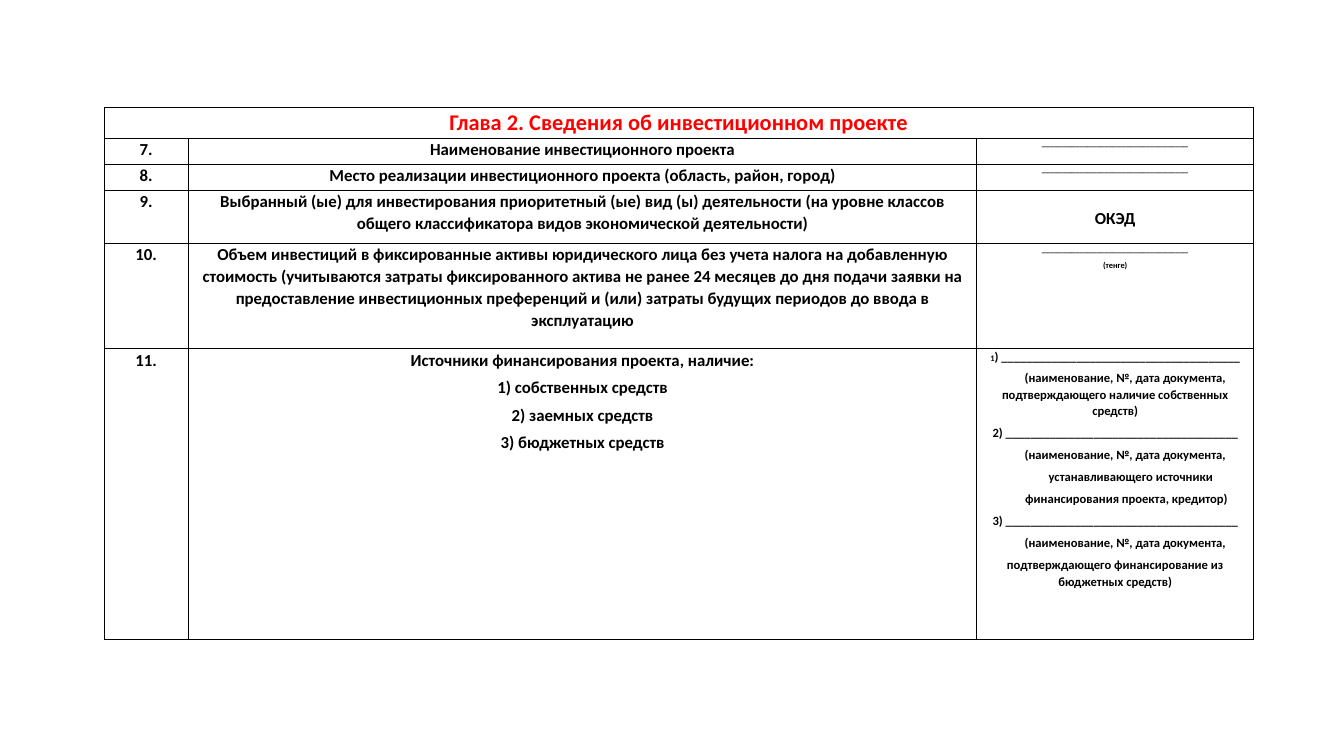
from dataclasses import dataclass

from lxml.etree import SubElement
from pptx import Presentation
from pptx.dml.color import RGBColor
from pptx.enum.text import PP_ALIGN
from pptx.oxml.ns import qn
from pptx.table import _Cell
from pptx.util import Inches, Pt

FONT = "Calibri"
BLACK = "000000"
RED = "FF0000"
BLANK_LINE = "_" * 35
DOCUMENT_HINT = "(наименование, №, дата документа,"


@dataclass
class Line:
    text: str
    size: float = 24
    indent: float = 0
    after: float = 8
    spacing: float = 1.07
    color: str = BLACK
    lead: str = ""  # small opening run
    lead_size: float = 12


@dataclass
class Row:
    height: float
    number: str
    subject: list[Line]
    answer: list[Line]
    answer_top: float = 0


def rgb(value: str) -> RGBColor:
    return RGBColor.from_string(value)


def set_borders(cell: _Cell) -> None:
    properties = cell._tc.get_or_add_tcPr()
    for position, side in enumerate(("a:lnL", "a:lnR", "a:lnT", "a:lnB")):
        border = SubElement(properties, qn(side), w=str(Pt(1)))
        fill = SubElement(border, qn("a:solidFill"))
        SubElement(fill, qn("a:srgbClr"), val=BLACK)
        properties.insert(position, border)


def add_run(paragraph, text: str, size: float, color: str) -> None:
    run = paragraph.add_run()
    run.text = text
    run.font.name = FONT
    run.font.size = Pt(size)
    run.font.bold = True
    run.font.color.rgb = rgb(color)


def fill_cell(cell: _Cell, lines: list[Line], top: float = 0) -> None:
    cell.margin_left = cell.margin_right = Inches(0.07)
    cell.margin_top = Inches(top)
    cell.margin_bottom = 0
    frame = cell.text_frame
    for index, line in enumerate(lines):
        paragraph = frame.add_paragraph() if index else frame.paragraphs[0]
        paragraph.alignment = PP_ALIGN.CENTER
        paragraph.line_spacing = line.spacing
        paragraph.space_after = Pt(line.after)
        if line.indent:
            paragraph._p.get_or_add_pPr().set("marL", str(Inches(line.indent)))
        if line.lead:
            add_run(paragraph, line.lead, line.lead_size, line.color)
        add_run(paragraph, line.text, line.size, line.color)


TITLE = Line("Глава 2. Сведения об инвестиционном проекте", 32, after=0, color=RED)
TITLE_HEIGHT = 0.61
COLUMN_WIDTHS = (1.68, 15.64, 5.5)

ROWS = [
    Row(0.52, "7.", [Line("Наименование инвестиционного проекта")], [Line(BLANK_LINE, 12)]),
    Row(0.52, "8.",
        [Line("Место реализации инвестиционного проекта (область, район, город)")],
        [Line(BLANK_LINE, 12)]),
    Row(1.05, "9.",
        [Line("Выбранный (ые) для инвестирования приоритетный (ые) вид (ы) деятельности "
              "(на уровне классов общего классификатора видов экономической деятельности)")],
        [Line("ОКЭД")], answer_top=0.33),
    Row(2.09, "10.",
        [Line("Объем инвестиций в фиксированные активы юридического лица без учета налога "
              "на добавленную стоимость (учитываются затраты фиксированного актива не ранее "
              "24 месяцев до дня подачи заявки на предоставление инвестиционных преференций "
              "и (или) затраты будущих периодов до ввода в эксплуатацию")],
        [Line(BLANK_LINE, 12), Line("(тенге)", 12)]),
    Row(5.77, "11.",
        [Line("Источники финансирования проекта, наличие:"),
         Line("1) собственных средств"),
         Line("2) заемных средств"),
         Line("3) бюджетных средств")],
        [Line(") " + "_" * 38, 18, lead="1"),
         Line(DOCUMENT_HINT, 18, indent=0.4, after=0, spacing=1.0),
         Line("подтверждающего наличие собственных средств)", 18),
         Line("2) " + "_" * 37, 18),
         Line(DOCUMENT_HINT, 18, indent=0.4),
         Line("устанавливающего источники", 18, indent=0.62),
         Line("финансирования проекта, кредитор)", 18, indent=0.45),
         Line("3) " + "_" * 37, 18),
         Line(DOCUMENT_HINT, 18, indent=0.4),
         Line("подтверждающего финансирование из бюджетных средств)", 18)]),
]


def main() -> None:
    presentation = Presentation()
    presentation.slide_width = Inches(26.67)
    presentation.slide_height = Inches(15)
    slide = presentation.slides.add_slide(presentation.slide_layouts[6])

    # Table grid
    heights = [TITLE_HEIGHT] + [row.height for row in ROWS]
    frame = slide.shapes.add_table(
        len(heights), len(COLUMN_WIDTHS), Inches(2.06), Inches(2.13),
        Inches(sum(COLUMN_WIDTHS)), Inches(sum(heights)))
    table = frame.table
    table.first_row = table.horz_banding = False
    for column, width in zip(table.columns, COLUMN_WIDTHS):
        column.width = Inches(width)
    for table_row, height in zip(table.rows, heights):
        table_row.height = Inches(height)
    for cell in table.iter_cells():
        cell.fill.background()
        set_borders(cell)

    # Chapter heading across all columns
    table.cell(0, 0).merge(table.cell(0, len(COLUMN_WIDTHS) - 1))
    fill_cell(table.cell(0, 0), [TITLE])

    # Numbered questions
    for index, row in enumerate(ROWS, start=1):
        fill_cell(table.cell(index, 0), [Line(row.number)])
        fill_cell(table.cell(index, 1), row.subject)
        fill_cell(table.cell(index, 2), row.answer, row.answer_top)

    presentation.save("out.pptx")


if __name__ == "__main__":
    main()
